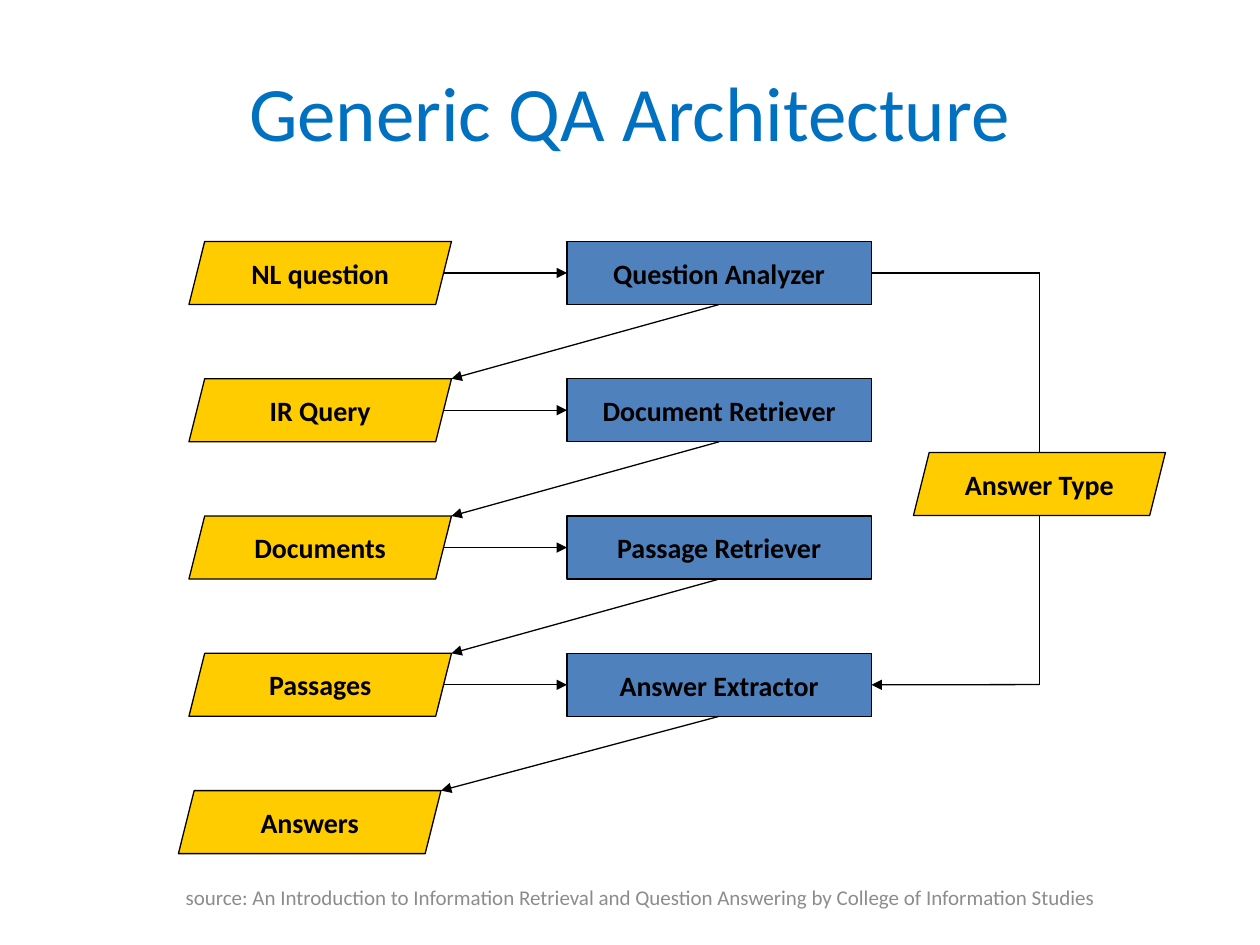
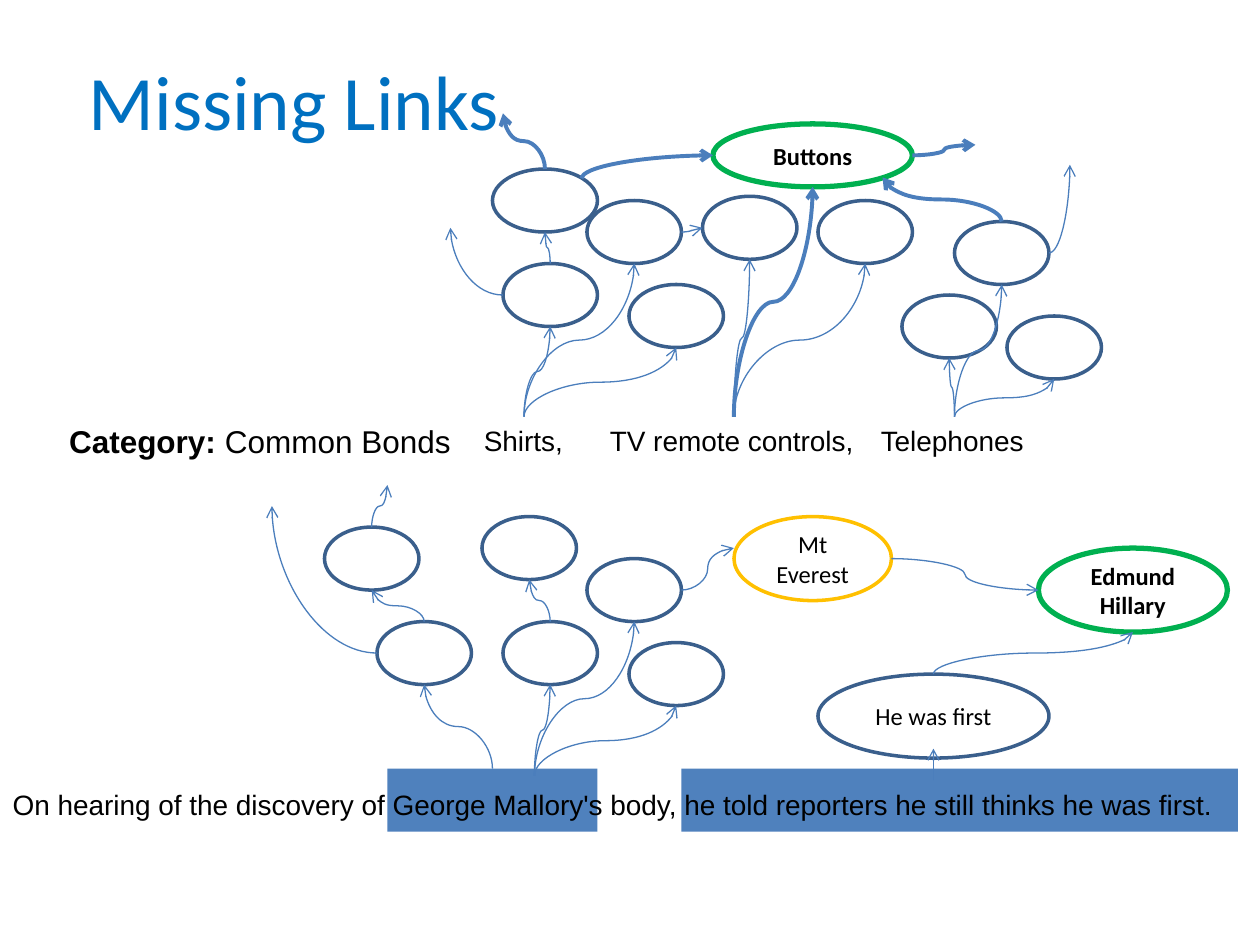
from dataclasses import dataclass

from lxml.etree import SubElement
from pptx import Presentation
from pptx.dml.color import RGBColor
from pptx.enum.shapes import MSO_CONNECTOR, MSO_SHAPE
from pptx.enum.text import MSO_ANCHOR, MSO_AUTO_SIZE, PP_ALIGN
from pptx.oxml.ns import qn
from pptx.util import Inches, Pt

COLORS = {
    "title": "0070C0", "process": "4F81BD", "data": "FFCC00", "ink": "000000",
    "source": "8C8C8C", "node": "3A5F8C", "link": "4B7EBC",
    "answer": "00B050", "hint": "FFC000",
}
COLUMNS, ROWS = 120, 90
CELL = Inches(10) / COLUMNS
SPOTS = {
    "top": (0.5, 0), "bottom": (0.5, 1), "left": (0, 0.5), "right": (1, 0.5),
    "upper left": (0, 0.375), "top right": (0.85, 0.15), "bottom right": (0.85, 0.85),
}
CENTER = {"align": PP_ALIGN.CENTER, "anchor": MSO_ANCHOR.MIDDLE}


@dataclass
class Box:
    """A region measured in columns and rows of the slide grid."""
    left: float
    top: float
    width: float
    height: float

    def inner(self, left, top, width, height):
        """Return a box placed relative to this one."""
        return Box(self.left + left, self.top + top, width, height)

    def point(self, across, down):
        """Return the grid point at the given offset."""
        return self.left + across, self.top + down

    def spot(self, name):
        """Return the grid point of a named spot on the edge."""
        across, down = SPOTS[name]
        return self.point(across * self.width, down * self.height)

    def lengths(self):
        """Return left, top, width and height in slide units."""
        return [grid(value) for value in (self.left, self.top, self.width, self.height)]


@dataclass
class Node:
    """An ellipse of a link graph."""
    left: float
    top: float
    width: float = 9
    height: float = 6
    lines: tuple = ()
    color: str = "node"
    weight: float = 2
    bold: bool = False


@dataclass
class Link:
    """A curved arrow between node spots or free points."""
    start: tuple
    end: tuple
    weight: float = 0.75
    bend: bool = False


def grid(cells):
    """Convert grid cells to slide units."""
    return round(cells * CELL)


def rgb(name):
    """Look up a named colour."""
    return RGBColor.from_string(COLORS[name])


def write(shape, *paragraphs, size=16, font="Calibri", color="ink", bold=False,
          align=PP_ALIGN.LEFT, anchor=MSO_ANCHOR.TOP, wrap=True):
    """Write paragraphs, each a string or a list of (text, bold) spans."""
    frame = shape.text_frame
    frame.auto_size = MSO_AUTO_SIZE.NONE
    frame.word_wrap, frame.vertical_anchor = wrap, anchor
    for index, content in enumerate(paragraphs):
        para = frame.add_paragraph() if index else frame.paragraphs[0]
        para.alignment, para.space_before = align, Pt(0)
        for text, heavy in [(content, bold)] if isinstance(content, str) else content:
            span = para.add_run()
            span.text = text
            span.font.name, span.font.size, span.font.bold = font, Pt(size), heavy
            span.font.color.rgb = rgb(color)


def move(shape, box):
    """Move a placeholder to a box."""
    shape.left, shape.top, shape.width, shape.height = box.lengths()


def add_title(page, text, box):
    """Fill and place the title placeholder."""
    move(page.shapes.title, box)
    write(page.shapes.title, text, size=44, color="title", **CENTER)


def add_label(page, box, *paragraphs, **style):
    """Add a text box."""
    write(page.shapes.add_textbox(*box.lengths()), *paragraphs, **style)


def add_figure(page, kind, box, fill=None, line=None, weight=0.75):
    """Add a flat preset shape."""
    shape = page.shapes.add_shape(kind, *box.lengths())
    shape.shadow.inherit = False
    if fill:
        shape.fill.solid()
        shape.fill.fore_color.rgb = rgb(fill)
    else:
        shape.fill.background()
    if line:
        shape.line.color.rgb = rgb(line)
        shape.line.width = Pt(weight)
    else:
        shape.line.fill.background()
    return shape


def add_line(page, start, end, kind=MSO_CONNECTOR.STRAIGHT, color="ink", weight=0.75, head=None):
    """Add a connector between two grid points, with an optional arrowhead."""
    line = page.shapes.add_connector(kind, *map(grid, (*start, *end)))
    line.line.color.rgb = rgb(color)
    line.line.width = Pt(weight)
    if head:
        SubElement(line.line._get_or_add_ln(), qn("a:tailEnd"), type=head)
    SubElement(line._element.spPr, qn("a:effectLst"))
    return line


def add_curve(page, start, end, rise, bend, weight):
    """Add a curved arrow; a rising one leaves its start upwards."""
    turn = None
    if rise:
        side = 1 if end[0] >= start[0] else -1
        turn = 90 if side > 0 else 270
        middle = (start[0] + end[0]) / 2, (start[1] + end[1]) / 2
        across = side * abs(end[1] - start[1]) / 2
        down = abs(end[0] - start[0]) / 2
        start = middle[0] + across, middle[1] + down
        end = middle[0] - across, middle[1] - down
    curve = add_line(page, start, end, MSO_CONNECTOR.CURVE, "link", weight, "arrow")
    properties = curve._element.spPr
    if turn:
        properties.find(qn("a:xfrm")).set("rot", str(turn * 60000))
    if bend:
        properties.find(qn("a:prstGeom")).set("prst", "curvedConnector2")


def add_data(page, box, text):
    """Add a parallelogram that holds a piece of data."""
    shape = add_figure(page, MSO_SHAPE.PARALLELOGRAM, box, "data", "ink")
    shape.adjustments[0] = 0.25
    write(shape, text, bold=True, wrap=False, **CENTER)


def add_pipeline(page, box):
    """Draw rows of data and process, and return the process shapes."""
    inputs = ["NL question", "IR Query", "Documents", "Passages"]
    steps = ["Question Analyzer", "Document Retriever", "Passage Retriever", "Answer Extractor"]
    pitch, height, data_width = (box.height - 6) / len(steps), 6, 25
    processes = []
    for row, (data, step) in enumerate(zip(inputs, steps)):
        top = row * pitch
        add_data(page, box.inner(1, top, data_width, height), data)
        process = add_figure(page, MSO_SHAPE.RECTANGLE, box.inner(37, top, 29, height),
                             "process", "ink")
        write(process, step, bold=True, wrap=False, **CENTER)
        middle = top + height / 2
        arrow = add_line(page, box.point(25.25, middle), box.point(37, middle), head="triangle")
        arrow.end_connect(process, 1)
        next_corner = 26 if row < len(steps) - 1 else 25
        arrow = add_line(page, box.point(51.5, top + height),
                         box.point(next_corner, top + pitch), head="triangle")
        arrow.begin_connect(process, 2)
        processes.append(process)
    add_data(page, box.inner(0, len(steps) * pitch, data_width, height), "Answers")
    return processes


def add_answer_type(page, box, analyzer, extractor):
    """Draw the branch from the analyzer to the extractor."""
    corner, foot = box.point(16, 0), box.point(16, box.height)
    add_line(page, corner, box.point(0, 0)).end_connect(analyzer, 3)
    add_line(page, foot, corner)
    add_line(page, foot, box.point(0, box.height), head="triangle").end_connect(extractor, 3)
    add_data(page, box.inner(4, 17.1, 24, 6), "Answer Type")


def add_graph(page, box, nodes, links):
    """Draw ellipses and the curved arrows between them."""
    places = {}
    for name, node in nodes.items():
        places[name] = box.inner(node.left, node.top, node.width, node.height)
        shape = add_figure(page, MSO_SHAPE.OVAL, places[name], None, node.color, node.weight)
        if node.lines:
            write(shape, *node.lines, size=14, bold=node.bold, **CENTER)

    def locate(end):
        """Resolve a node spot or a free point."""
        return places[end[0]].spot(end[1]) if end[0] in places else box.point(*end)

    for link in links:
        rise = link.start[1] not in ("left", "right")
        add_curve(page, locate(link.start), locate(link.end), rise, link.bend, link.weight)


def add_bonds(page, box):
    """Draw the graph above the three words with a common bond."""
    shirts, remote, phones = ((column, 29.6) for column in (7, 27, 48))
    nodes = {
        "shirt far": Node(4, 6, width=10), "shirt left": Node(5, 15),
        "shirt middle": Node(13, 9), "shirt right": Node(17, 17),
        "remote left": Node(24, 8.6), "remote right": Node(35, 9),
        "phone left": Node(43, 18), "phone middle": Node(48, 11), "phone right": Node(53, 20),
        "buttons": Node(25, 1.7, width=19, lines=("Buttons",), color="answer", weight=3, bold=True),
    }
    fans = {shirts: ("shirt left", "shirt middle", "shirt right"),
            remote: ("remote left", "remote right", "buttons"),
            phones: ("phone left", "phone middle", "phone right")}
    links = [Link(word, (name, "bottom"), 2.25 if name == "buttons" else 0.75)
             for word, names in fans.items() for name in names]
    links += [
        Link(("shirt left", "top"), ("shirt far", "bottom")),
        Link(("shirt middle", "right"), ("remote left", "left")),
        Link(("phone middle", "top"), ("buttons", "bottom right"), 2.25),
        Link(("shirt far", "top right"), ("buttons", "left"), 2.25, bend=True),
        Link(("shirt far", "top"), (5, 0.7), 2.25),
        Link(("shirt left", "left"), (0, 11.6), bend=True),
        Link(("phone middle", "right"), (59, 5.6), bend=True),
        Link(("buttons", "right"), (50, 3.7), 2.25),
    ]
    add_graph(page, box, nodes, links)


def add_clue(page, box):
    """Draw the highlighted clue and the graph above it."""
    for left, width in ((39, 53), (11, 20)):
        add_figure(page, MSO_SHAPE.RECTANGLE, box.inner(left, 27, width, 6), "process")
    nodes = {
        "far left": Node(5, 4), "left": Node(10, 13), "far middle": Node(20, 3),
        "middle": Node(22, 13), "far right": Node(30, 7), "right": Node(34, 15),
        "everest": Node(44, 3, 15, 8, ("Mt Everest",), "hint"),
        "first": Node(52, 18, 22, 8, ("He was first",)),
        "hillary": Node(73, 6, 18, 8, ("Edmund", "Hillary"), "answer", 3, True),
    }
    links = [Link((25, 27.7), (name, "bottom")) for name in ("middle", "right", "far right")]
    links += [
        Link((21, 27), ("left", "bottom")),
        Link(("middle", "top"), ("far middle", "bottom")),
        Link(("left", "top"), ("far left", "bottom")),
        Link(("far left", "top"), (11, 0)),
        Link(("left", "left"), (0, 2), bend=True),
        Link(("far right", "right"), ("everest", "upper left")),
        Link(("everest", "right"), ("hillary", "left")),
        Link(("first", "top"), ("hillary", "bottom")),
        Link((63, 28.1), (63, 25.1)),
    ]
    add_graph(page, box, nodes, links)


def add_category(page, box):
    """Write the category and its three words on one line."""
    add_label(page, box.inner(0, 0, 48, 4.8),
              [("Category:", True), (" Common Bonds", False)], size=18, font="Arial")
    for left, width, word in ((39.5, 10, "Shirts,"), (51.5, 26, "TV remote controls,"),
                              (77.3, 16.2, "Telephones")):
        add_label(page, box.inner(left, 0.1, width, 4.4), word, font="Arial", wrap=False)


def add_sentence(page, box, text):
    """Write the clue in the body placeholder, without a bullet."""
    body = page.placeholders[1]
    move(body, box)
    write(body, text, font="Arial")
    page.shapes._spTree.append(body._element)
    properties = body.text_frame.paragraphs[0]._p.get_or_add_pPr()
    properties.set("marL", "0")
    properties.set("indent", "0")
    SubElement(properties, qn("a:buNone"))


def build_architecture(deck):
    """Build the slide on question answering architecture."""
    page = deck.slides.add_slide(deck.slide_layouts[5])
    add_title(page, "Generic QA Architecture", Box(6, 3, 108, 15))
    processes = add_pipeline(page, Box(17, 23, 66, 58.3))
    add_answer_type(page, Box(83, 26, 28, 39.2), processes[0], processes[-1])
    add_label(page, Box(7, 83, 108, 4.8),
              "source: An Introduction to Information Retrieval and Question Answering "
              "by College of Information Studies", size=12, color="source", **CENTER)


def build_missing_links(deck):
    """Build the slide on missing links."""
    page = deck.slides.add_slide(deck.slide_layouts[1])
    add_title(page, "Missing Links", Box(0, 2, 56, 15))
    add_bonds(page, Box(42.9, 10.1, 62, 30))
    add_category(page, Box(5.4, 39.6, 94, 5))
    add_clue(page, Box(25.9, 46.2, 92, 33))
    add_sentence(page, Box(0, 74.4, 118, 4.4),
                 "On hearing of the discovery of George Mallory's body, "
                 "he told reporters he still thinks he was first.")


def main():
    """Build and save the deck."""
    deck = Presentation()
    deck.slide_width, deck.slide_height = grid(COLUMNS), grid(ROWS)
    build_architecture(deck)
    build_missing_links(deck)
    deck.save("out.pptx")


if __name__ == "__main__":
    main()
